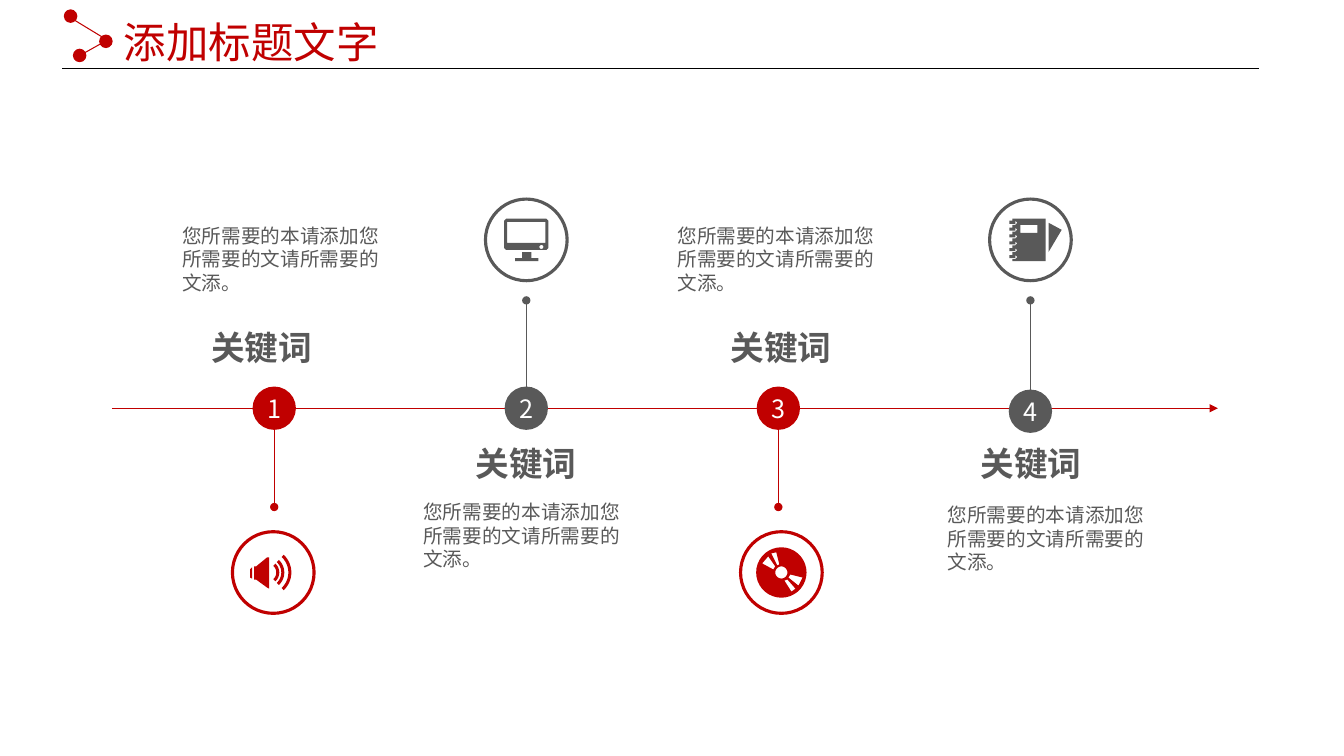
from math import cos, radians, sin

from lxml.etree import SubElement
from pptx import Presentation
from pptx.dml.color import RGBColor
from pptx.enum.shapes import MSO_CONNECTOR, MSO_SHAPE
from pptx.enum.text import MSO_ANCHOR, MSO_AUTO_SIZE, PP_ALIGN
from pptx.oxml.ns import qn
from pptx.util import Inches, Pt

# Content
TITLE = "添加标题文字"
KEYWORD = "关键词"
BODY = "您所需要的本请添加您所需要的文请所需要的文添。"
STEPS = [
    dict(number="1", color="red", badge_y=4.05, icon="speaker", icon_x=2.71,
         keyword_left=1.87, body_at=(1.71, 2.17)),
    dict(number="2", color="gray", badge_y=4.05, icon="monitor", icon_x=5.22,
         keyword_left=4.49, body_at=(4.1, 4.91)),
    dict(number="3", color="red", badge_y=4.05, icon="disc", icon_x=7.75,
         keyword_left=7.02, body_at=(6.62, 2.17)),
    dict(number="4", color="gray", badge_y=4.08, icon="notebook", icon_x=10.22,
         keyword_left=9.5, body_at=(9.3, 4.94)),
]
MARK_DOTS = [(0.7, 0.16), (0.79, 0.55), (1.05, 0.41)]
MARK_LINES = [((0.64, 0.14), (1.1, 0.42)), ((0.74, 0.58), (1.06, 0.4))]

THEME = dict(
    font="Noto Sans CJK SC",
    red=RGBColor(0xC0, 0, 0), gray=RGBColor(0x59, 0x59, 0x59),
    black=RGBColor(0, 0, 0), white=RGBColor(255, 255, 255),
    title=30.3, keyword=24, badge=18, body=14,
)

# Layout by side of the axis: red steps have text above, gray steps below
FIRST_X, STEP_X, AXIS_Y = 2.72, 2.5, 4.05
SIDES = {
    "red": dict(stem=(4.04, 5.03), icon_y=5.68, keyword_top=3.23),
    "gray": dict(stem=(2.98, 3.96), icon_y=2.38, keyword_top=4.38),
}


# Icon outlines, in slide inches
def arc(x, y, radius, start=0, end=360, count=36):
    angles = [radians(start + (end - start) * i / count) for i in range(count + 1)]
    return [(x + radius * cos(a), y + radius * sin(a)) for a in angles]


def box(left, top, right, bottom, cut=0):
    return [(left + cut, top), (right - cut, top), (right, top + cut),
            (right, bottom - cut), (right - cut, bottom), (left + cut, bottom),
            (left, bottom - cut), (left, top + cut)]


def wave(radius):
    x, y, spread = 2.65, 5.68, 47
    return (arc(x, y, radius, -spread, spread)
            + arc(x, y, radius - 0.03, spread, -spread))


def notebook_edge():
    points = [(10.04, 2.17)]
    for ring in range(6):
        y = 2.19 + 0.068 * ring
        points += [(10.04, y), (10.01, y), (10.01, y + 0.03), (10.07, y + 0.03),
                   (10.07, y), (10.09, y + 0.02), (10.07, y + 0.04), (10.04, y + 0.04)]
    return points + [(10.04, 2.59), (10.37, 2.59), (10.37, 2.17)]


ICONS = {
    "speaker": [
        [(2.65, 5.53), (2.67, 5.53), (2.67, 5.84), (2.65, 5.83), (2.54, 5.75),
         (2.52, 5.75), (2.52, 5.62), (2.54, 5.62)],
        [(2.48, 5.65), (2.5, 5.63), (2.5, 5.74), (2.48, 5.73)],
        wave(0.12), wave(0.17), wave(0.24),
    ],
    "monitor": [
        box(5, 2.17, 5.44, 2.48, 0.02),
        box(5.03, 2.2, 5.41, 2.41),
        arc(5.37, 2.45, 0.02),
        [(5.11, 2.56), (5.18, 2.56), (5.18, 2.5), (5.27, 2.5), (5.27, 2.56),
         (5.34, 2.56), (5.34, 2.59), (5.11, 2.59)],
    ],
    "disc": [
        arc(7.75, 5.68, 0.25),
        arc(7.75, 5.68, 0.06),
        [(7.71, 5.61), (7.73, 5.6), (7.7, 5.48), (7.65, 5.49)],
        [(7.81, 5.75), (7.78, 5.76), (7.85, 5.87), (7.89, 5.84)],
        [(7.96, 5.73), (7.84, 5.7), (7.82, 5.73), (7.92, 5.81)],
        [(7.56, 5.59), (7.67, 5.65), (7.69, 5.62), (7.62, 5.52)],
    ],
    "notebook": [
        [(10.4, 2.21), (10.4, 2.5), (10.53, 2.28)],
        notebook_edge(),
        box(10.12, 2.23, 10.29, 2.31),
    ],
}

presentation = Presentation()
presentation.slide_width, presentation.slide_height = Inches(13.33), Inches(7.5)
slide = presentation.slides.add_slide(presentation.slide_layouts[6])


# Drawing helpers
def paint(shape, fill=None, line=None, width=1):
    shape.shadow.inherit = False
    if fill:
        shape.fill.solid()
        shape.fill.fore_color.rgb = THEME[fill]
    else:
        shape.fill.background()
    if line:
        shape.line.color.rgb = THEME[line]
        shape.line.width = Pt(width)
    else:
        shape.line.fill.background()


def add_circle(x, y, size, **style):
    circle = slide.shapes.add_shape(
        MSO_SHAPE.OVAL, Inches(x - size / 2), Inches(y - size / 2), Inches(size), Inches(size))
    paint(circle, **style)
    return circle


def add_line(start, end, color, width=0.5, **ends):
    line = slide.shapes.add_connector(
        MSO_CONNECTOR.STRAIGHT, *(Inches(value) for value in start + end))
    line.line.color.rgb = THEME[color]
    line.line.width = Pt(width)
    for name, kind in ends.items():
        SubElement(line.line._get_or_add_ln(), qn("a:" + name), type=kind)
    SubElement(line._element.spPr, qn("a:effectLst"))


def add_icon(contours, color):
    builder = None
    for contour in contours:
        first, *rest = [(Inches(x), Inches(y)) for x, y in contour]
        if builder is None:
            builder = slide.shapes.build_freeform(*first)
        else:
            builder.move_to(*first)
        builder.add_line_segments(rest, close=True)
    paint(builder.convert_to_shape(), fill=color)


def write(shape, text, size, color, bold=False, **paragraph_format):
    paragraph = shape.text_frame.paragraphs[0]
    for name, value in paragraph_format.items():
        setattr(paragraph, name, value)
    run = paragraph.add_run()
    run.text = text
    font_format = dict(name=THEME["font"], size=Pt(THEME[size]), bold=bold)
    for name, value in font_format.items():
        setattr(run.font, name, value)
    run.font.color.rgb = THEME[color]
    SubElement(run._r.get_or_add_rPr(), qn("a:ea"), typeface=THEME["font"])


def add_text(left, top, width, height, *content, **formats):
    text_box = slide.shapes.add_textbox(*(Inches(v) for v in (left, top, width, height)))
    text_box.text_frame.word_wrap = True
    text_box.text_frame.auto_size = MSO_AUTO_SIZE.SHAPE_TO_FIT_TEXT
    write(text_box, *content, **formats)


# Header
add_line((0.62, 0.68), (12.49, 0.68), "black")
for x, y in MARK_DOTS:
    add_circle(x, y, 0.12, fill="red", line="red")
for start, end in MARK_LINES:
    add_line(start, end, "red", 0.75)
add_text(1.13, 0.01, 3, 0.71, TITLE, "title", "red", line_spacing=1.2)

# Stems and axis, behind the badges
for index, step in enumerate(STEPS):
    x = FIRST_X + STEP_X * index
    top, bottom = SIDES[step["color"]]["stem"]
    add_line((x, top), (x, bottom), step["color"], headEnd="oval", tailEnd="oval")
add_line((1.11, AXIS_Y), (12.08, AXIS_Y), "red", tailEnd="triangle")

# Badges, icons and text
for index, step in enumerate(STEPS):
    color, side = step["color"], SIDES[step["color"]]
    badge = add_circle(FIRST_X + STEP_X * index, step["badge_y"], 0.43, fill=color)
    frame_format = dict(margin_left=0, margin_right=0, margin_top=0, margin_bottom=0,
                        vertical_anchor=MSO_ANCHOR.MIDDLE, word_wrap=False)
    for name, value in frame_format.items():
        setattr(badge.text_frame, name, value)
    write(badge, step["number"], "badge", "white", alignment=PP_ALIGN.CENTER)
    add_circle(step["icon_x"], side["icon_y"], 0.81, line=color, width=2.25)
    add_icon(ICONS[step["icon"]], color)
    add_text(*step["body_at"], 2.25, 0.81, BODY, "body", "gray")
    add_text(step["keyword_left"], side["keyword_top"], 1.45, 0.48, KEYWORD, "keyword", "gray",
             bold=True, alignment=PP_ALIGN.CENTER, line_spacing=0.94)

presentation.save("out.pptx")
